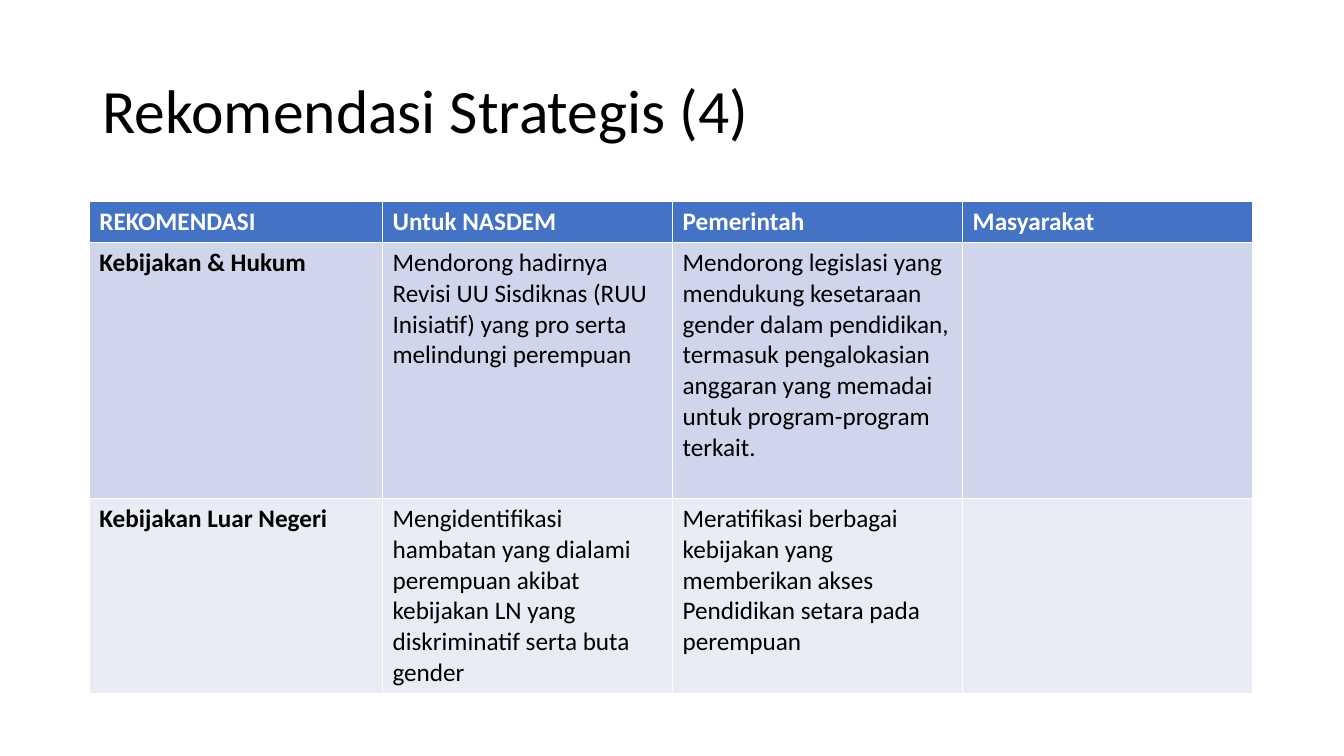
from pptx import Presentation
from pptx.dml.color import RGBColor
from pptx.enum.text import MSO_ANCHOR as Anchor, MSO_AUTO_SIZE as Fit, PP_ALIGN as Align
from pptx.util import Cm, Pt

# Content
TITLE = "Rekomendasi Strategis (4)"
ROWS = [
    ("REKOMENDASI", "Untuk NASDEM", "Pemerintah", "Masyarakat"),
    ("Kebijakan & Hukum",
     "Mendorong hadirnya Revisi UU Sisdiknas (RUU Inisiatif) yang pro serta "
     "melindungi perempuan",
     "Mendorong legislasi yang mendukung kesetaraan gender dalam pendidikan, "
     "termasuk pengalokasian anggaran yang memadai untuk program-program terkait.",
     ""),
    ("Kebijakan Luar Negeri",
     "Mengidentifikasi hambatan yang dialami perempuan akibat kebijakan LN yang "
     "diskriminatif serta buta gender",
     "Meratifikasi berbagai kebijakan yang memberikan akses Pendidikan setara "
     "pada perempuan",
     ""),
]

# Format
BLACK = RGBColor(0x00, 0x00, 0x00)
WHITE = RGBColor(0xFF, 0xFF, 0xFF)
BLUE = RGBColor(0x44, 0x72, 0xC4)
BAND = RGBColor(0xCF, 0xD5, 0xEA)
PALE = RGBColor(0xE9, 0xEB, 0xF5)
FILLS = [BLUE, BAND, PALE]
WIDTHS = [7.39, 7.31, 7.31, 7.31]
HEIGHTS = [1.03, 6.45, 4.88]


def style(font, **values):
    font.name = "Calibri"
    for key, value in values.items():
        setattr(font, key, value)


def main():
    deck = Presentation()
    deck.slide_width, deck.slide_height = Cm(33.87), Cm(19.05)
    slide = deck.slides.add_slide(deck.slide_layouts[5])

    # Title
    title = slide.shapes.title
    place = {"left": 2.33, "top": 1.01, "width": 29.21, "height": 3.68}
    for key, value in place.items():
        setattr(title, key, Cm(value))
    frame = title.text_frame
    frame.text = TITLE
    frame.auto_size = Fit.NONE
    frame.vertical_anchor = Anchor.MIDDLE
    para = frame.paragraphs[0]
    para.alignment = Align.LEFT
    para.line_spacing = 0.9
    style(para.runs[0].font, size=Pt(44), color_rgb=None)
    para.runs[0].font.color.rgb = BLACK

    # Table
    grid = slide.shapes.add_table(
        len(ROWS), len(WIDTHS), Cm(2.25), Cm(5.08),
        Cm(sum(WIDTHS)), Cm(sum(HEIGHTS))).table
    grid.horz_banding = False
    for col, width in zip(grid.columns, WIDTHS):
        col.width = Cm(width)
    for row, height in zip(grid.rows, HEIGHTS):
        row.height = Cm(height)

    # Cells
    for r, texts in enumerate(ROWS):
        for c, text in enumerate(texts):
            cell = grid.cell(r, c)
            cell.fill.solid()
            cell.fill.fore_color.rgb = FILLS[r]
            cell.text = text
            font = cell.text_frame.paragraphs[0].font
            if text:
                font = cell.text_frame.paragraphs[0].runs[0].font
            style(font, size=Pt(18), bold=r == 0 or c == 0)
            font.color.rgb = BLACK if r else WHITE

    deck.save("out.pptx")


if __name__ == "__main__":
    main()
